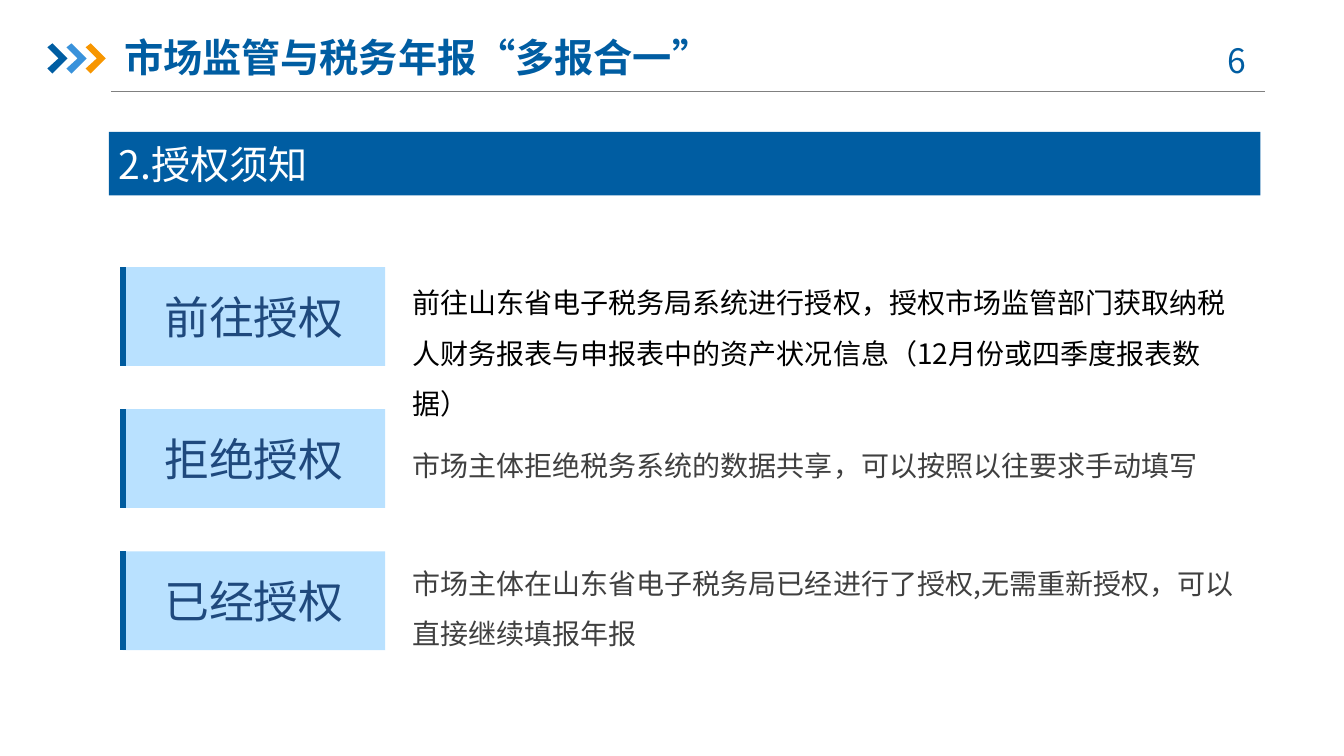
"""Build the slide on the rules for authorising tax data sharing."""
from lxml import etree
from pptx import Presentation
from pptx.dml.color import RGBColor
from pptx.enum.shapes import MSO_CONNECTOR, MSO_SHAPE
from pptx.enum.text import MSO_ANCHOR, PP_ALIGN
from pptx.oxml.ns import qn
from pptx.util import Inches, Pt

FONT = "Noto Sans CJK SC"
BLUE = RGBColor(0x00, 0x5D, 0xA2)
SKY = RGBColor(0x39, 0x92, 0xDB)
ORANGE = RGBColor(0xF7, 0x96, 0x00)
PALE = RGBColor(0xB9, 0xE1, 0xFF)
NAVY = RGBColor(0x1F, 0x49, 0x7D)
EDGE = RGBColor(0x00, 0x5B, 0x9E)
GRAY = RGBColor(0x80, 0x80, 0x80)
DARK = RGBColor(0x40, 0x40, 0x40)
BLACK = RGBColor(0, 0, 0)
WHITE = RGBColor(0xFF, 0xFF, 0xFF)
RECT = MSO_SHAPE.RECTANGLE
STRAIGHT = MSO_CONNECTOR.STRAIGHT
MIDDLE, TOP = MSO_ANCHOR.MIDDLE, MSO_ANCHOR.TOP
LEFT, CENTER = PP_ALIGN.LEFT, PP_ALIGN.CENTER

deck = Presentation()
deck.slide_width, deck.slide_height = Inches(13.33), Inches(7.5)
slide = deck.slides.add_slide(deck.slide_layouts[6])
shapes = slide.shapes


def write(box, text, size, color, align=LEFT, anchor=MIDDLE, bold=False, space=1.0):
    frame = box.text_frame
    frame.word_wrap = True
    frame.vertical_anchor = anchor
    para = frame.paragraphs[0]
    para.alignment = align
    para.line_spacing = space
    run = para.add_run()
    run.text = text
    run.font.name = FONT
    run.font.size = Pt(size)
    run.font.bold = bold
    run.font.color.rgb = color
    east = etree.SubElement(run.font._element, qn("a:ea"))
    east.set("typeface", FONT)


def rule(x1, y1, x2, y2, color, width):
    line = shapes.add_connector(STRAIGHT, Inches(x1), Inches(y1), Inches(x2), Inches(y2))
    line.line.color.rgb = color
    line.line.width = Pt(width)
    etree.SubElement(line._element.spPr, qn("a:effectLst"))


rule(1.1, 0.91, 12.55, 0.91, GRAY, 0.75)

ARROW = [(0, 0.04), (0.05, 0), (0.2, 0.15), (0.05, 0.3), (0, 0.25), (0.11, 0.15)]
for i, color in enumerate((BLUE, SKY, ORANGE)):
    spots = [(Inches(0.47 + 0.19 * i + x), Inches(0.43 + y)) for x, y in ARROW]
    path = shapes.build_freeform(*spots[0])
    path.add_line_segments(spots[1:], close=True)
    arrow = path.convert_to_shape()
    arrow.shadow.inherit = False
    arrow.fill.solid()
    arrow.fill.fore_color.rgb = color
    arrow.line.fill.background()

page = shapes.add_textbox(Inches(11.81), Inches(0.35), Inches(0.98), Inches(0.5))
write(page, "6 ", 24, BLUE, align=CENTER, anchor=TOP)

title = shapes.add_textbox(Inches(1.23), Inches(0.29), Inches(6.69), Inches(0.55))
title.text_frame.margin_left = title.text_frame.margin_right = 0
write(title, "市场监管与税务年报“多报合一”", 28, BLUE, bold=True)

STEP = 1.41
LABELS = ["前往授权", "拒绝授权", "已经授权"]
PANELS = [(1.08, 1.31, 11.42, 0.63, BLUE, "2.授权须知", 28, WHITE, LEFT)]
for i, label in enumerate(LABELS):
    PANELS.append((1.22, 2.65 + STEP * i, 2.6, 0.98, PALE, label, 32, NAVY, CENTER))

for x, y, wide, high, fill, text, size, color, align in PANELS:
    panel = shapes.add_shape(RECT, Inches(x), Inches(y), Inches(wide), Inches(high))
    panel.shadow.inherit = False
    panel.fill.solid()
    panel.fill.fore_color.rgb = fill
    panel.line.fill.background()
    write(panel, text, size, color, align=align)
    if fill == PALE:
        rule(x, y, x, y + high, EDGE, 4.5)

NOTES = [
    (2.62, 1.03, BLACK, "前往山东省电子税务局系统进行授权，授权市场监管部门获取纳税人财务报表与申报表中的资产状况信息（12月份或四季度报表数据）"),
    (4.23, 0.61, DARK, "市场主体拒绝税务系统的数据共享，可以按照以往要求手动填写"),
    (5.4, 1.03, DARK, "市场主体在山东省电子税务局已经进行了授权,无需重新授权，可以直接继续填报年报"),
]
for y, high, color, text in NOTES:
    note = shapes.add_textbox(Inches(3.99), Inches(y), Inches(8.35), Inches(high))
    write(note, text, 20, color, anchor=TOP, space=1.5)

deck.save("out.pptx")
